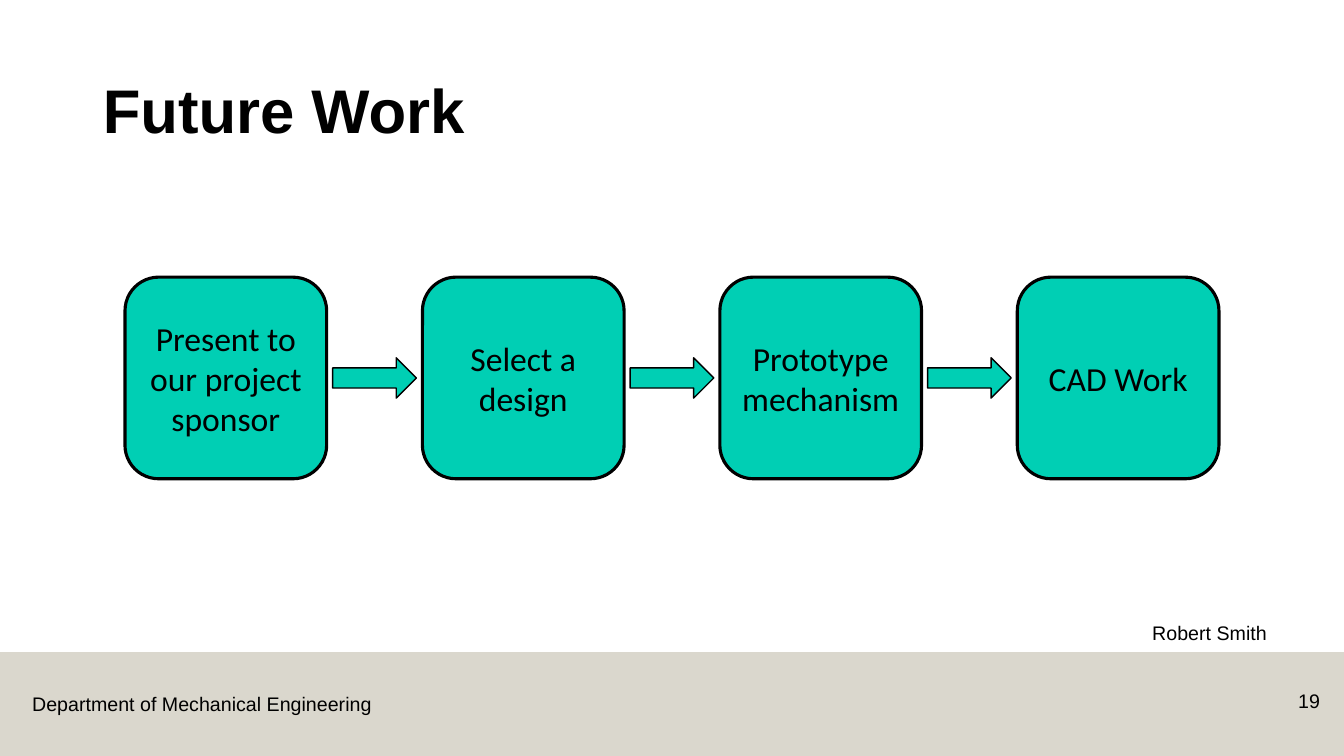
"""Build the Future Work slide: four steps joined by block arrows."""
import pptx
import pptx.dml.color
import pptx.enum.shapes
import pptx.enum.text
import pptx.oxml
import pptx.oxml.ns
import pptx.util

PX = 9144
SHAPES = pptx.enum.shapes.MSO_SHAPE
ALIGN = pptx.enum.text.PP_ALIGN
ANCHOR = pptx.enum.text.MSO_ANCHOR

BLACK = "000000"
TEAL = "00CFB4"
SAND = "B7B09C"

TITLE_FONT = {"name": "Arial", "size": pptx.util.Pt(44), "bold": True}
SMALL_FONT = {"name": "Arial", "size": pptx.util.Pt(14)}
STEP_FONT = {"name": "Calibri", "size": pptx.util.Pt(24)}

STEPS = ["Present to our project sponsor", "Select a design",
         "Prototype mechanism", "CAD Work"]
STEP_LEFT, STEP_TOP, STEP_SIZE, STEP_PITCH = 124, 275, 200, 295
ARROW_GAP, ARROW_WIDTH, ARROW_HEIGHT = 6, 83, 40


def color(value):
    """Turn a hex string into a colour."""
    return pptx.dml.color.RGBColor.from_string(value)


def emu(*lengths):
    """Scale px lengths to EMU."""
    return [pptx.util.Emu(length * PX) for length in lengths]


def apply_format(target, values):
    """Set each attribute named in a dict of format values."""
    for name, value in values.items():
        setattr(target, name, value)


def write_text(shape, text, font, frame_format=None, paragraph_format=None):
    """Write one formatted paragraph into a shape."""
    apply_format(shape.text_frame, {"word_wrap": True, **(frame_format or {})})
    paragraph = shape.text_frame.paragraphs[0]
    paragraph.text = text
    apply_format(paragraph, {"alignment": ALIGN.LEFT, **(paragraph_format or {})})
    apply_format(paragraph.font, font)
    paragraph.font.color.rgb = color(BLACK)


def add_label(slide, box, text, frame_format=None, paragraph_format=None):
    """Add a small text box."""
    label = slide.shapes.add_textbox(*emu(*box))
    write_text(label, text, SMALL_FONT, frame_format, paragraph_format)


def add_block(slide, kind, box, fill, line_width=0):
    """Add a filled preset shape, outlined in black if it has a line width."""
    block = slide.shapes.add_shape(kind, *emu(*box))
    block.shadow.inherit = False
    block.fill.solid()
    block.fill.fore_color.rgb = color(fill)
    if line_width:
        block.line.color.rgb = color(BLACK)
        block.line.width = pptx.util.Pt(line_width)
    else:
        block.line.fill.background()
    return block


def add_footer_band(slide):
    """Add the half-transparent band along the bottom."""
    band = add_block(slide, SHAPES.RECTANGLE, (0, 647, 1333, 103), SAND)
    fill_color = band.fill._xPr.find(".//" + pptx.oxml.ns.qn("a:srgbClr"))
    alpha = pptx.oxml.parse_xml(
        f'<a:alpha {pptx.oxml.ns.nsdecls("a")} val="50000"/>')
    fill_color.append(alpha)


def add_title(slide, box, text):
    """Place and fill the title placeholder."""
    title = slide.shapes.title
    geometry = zip(("left", "top", "width", "height"), emu(*box))
    apply_format(title, dict(geometry))
    write_text(title, text, TITLE_FONT, {"vertical_anchor": ANCHOR.MIDDLE},
               {"line_spacing": 0.9})


def add_step(slide, left, text):
    """Add one rounded step of the process."""
    step = add_block(slide, SHAPES.ROUNDED_RECTANGLE,
                     (left, STEP_TOP, STEP_SIZE, STEP_SIZE), TEAL, 2.25)
    write_text(step, text, STEP_FONT, {"vertical_anchor": ANCHOR.MIDDLE},
               {"alignment": ALIGN.CENTER})


def add_process(slide):
    """Add the row of steps with an arrow in each gap."""
    arrow_top = STEP_TOP + (STEP_SIZE - ARROW_HEIGHT) // 2
    for index, text in enumerate(STEPS):
        left = STEP_LEFT + index * STEP_PITCH
        add_step(slide, left, text)
        if index < len(STEPS) - 1:
            arrow_left = left + STEP_SIZE + ARROW_GAP
            add_block(slide, SHAPES.RIGHT_ARROW,
                      (arrow_left, arrow_top, ARROW_WIDTH, ARROW_HEIGHT),
                      TEAL, 1)


def main():
    """Build and save the slide."""
    presentation = pptx.Presentation()
    presentation.slide_width, presentation.slide_height = pptx.util.Inches(13.33), pptx.util.Inches(7.5)
    slide = presentation.slides.add_slide(presentation.slide_layouts[5])
    add_footer_band(slide)
    add_label(slide, (22, 682, 359, 34), "Department of Mechanical Engineering",
              {"word_wrap": False})
    add_title(slide, (92, 40, 1150, 145), "Future Work")
    add_label(slide, (1133, 614, 200, 34), "Robert Smith",
              paragraph_format={"line_spacing": 0.9})
    add_process(slide)
    add_label(slide, (1242, 679, 77, 40), "19",
              paragraph_format={"alignment": ALIGN.RIGHT})
    presentation.save("out.pptx")


if __name__ == "__main__":
    main()
